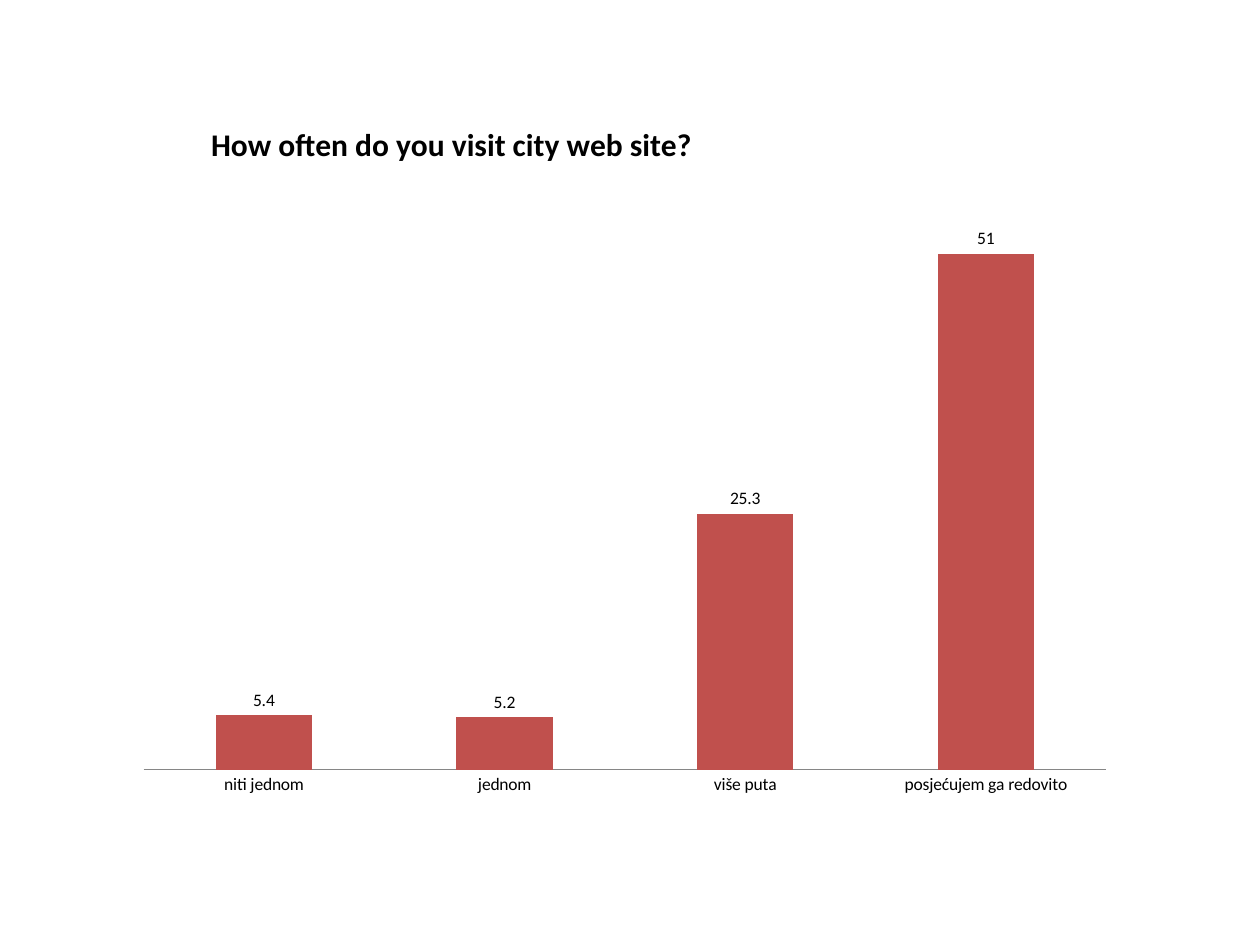
"""Build a slide with a column chart of how often people visit the city web site."""
from dataclasses import dataclass

import pptx
import pptx.chart.data
import pptx.dml.color
import pptx.enum.chart
import pptx.oxml
import pptx.oxml.ns
import pptx.util
from pptx.util import Inches


@dataclass(frozen=True)
class Theme:
    font: str = "Calibri"
    text: str = "000000"
    column: str = "C0504D"
    axis: str = "868686"
    title_size: int = 18
    label_size: int = 10


THEME = Theme()
CHART_BOX = (0.98, 0.6, 7.95, 5.83)
PLOT_BOX = (1.14, 1.29, 7.64, 4.82)
TITLE_POSITION = (1.63, 0.93)
QUESTION = "How often do you visit city web site?"
ANSWERS = {
    "niti jednom": 5.4,
    "jednom": 5.2,
    "više puta": 25.3,
    "posjećujem ga redovito": 51,
}


def rgb(value):
    return pptx.dml.color.RGBColor.from_string(value)


def style_font(font, size, bold=False):
    font.name = THEME.font
    font.size = pptx.util.Pt(size)
    font.bold = bold
    font.color.rgb = rgb(THEME.text)


def set_layout(part, index, left, top, width=None, height=None, inner=False):
    """Place a chart part at a slide position given in inches."""
    chart_left, chart_top, chart_width, chart_height = CHART_BOX
    fractions = {"x": (left - chart_left) / chart_width,
                 "y": (top - chart_top) / chart_height}
    if width is not None:
        fractions.update(w=width / chart_width, h=height / chart_height)
    target = '<c:layoutTarget val="inner"/>' if inner else ""
    modes = "".join(f'<c:{key}Mode val="edge"/>' for key in "xy")
    values = "".join(f'<c:{key} val="{value:.4f}"/>' for key, value in fractions.items())
    for old_layout in part.findall(pptx.oxml.ns.qn("c:layout")):
        part.remove(old_layout)
    part.insert(index, pptx.oxml.parse_xml(
        f'<c:layout {pptx.oxml.ns.nsdecls("c")}><c:manualLayout>'
        f"{target}{modes}{values}</c:manualLayout></c:layout>"))


def add_answers_chart(slide):
    answers = pptx.chart.data.CategoryChartData()
    answers.categories = list(ANSWERS)
    answers.add_series("Series 1", list(ANSWERS.values()))
    chart = slide.shapes.add_chart(
        pptx.enum.chart.XL_CHART_TYPE.COLUMN_CLUSTERED,
        *map(Inches, CHART_BOX), answers).chart
    chart.has_legend = False
    style_font(chart.font, THEME.label_size)
    return chart


def style_title(chart):
    chart.has_title = True
    title = chart.chart_title
    title.text_frame.text = QUESTION
    style_font(title.text_frame.paragraphs[0].runs[0].font, THEME.title_size, bold=True)
    set_layout(title.element, 1, *TITLE_POSITION)


def style_axes(chart):
    frequency = chart.category_axis
    frequency.major_tick_mark = pptx.enum.chart.XL_TICK_MARK.NONE
    frequency.format.line.color.rgb = rgb(THEME.axis)
    frequency.format.line.width = pptx.util.Pt(0.75)
    share = chart.value_axis
    share.minimum_scale = 0
    share.maximum_scale = 60
    share.has_major_gridlines = False
    share.visible = False


def style_columns(chart):
    columns = chart.plots[0]
    columns.gap_width = 150
    columns.vary_by_categories = False
    fill = columns.series[0].format.fill
    fill.solid()
    fill.fore_color.rgb = rgb(THEME.column)
    columns.has_data_labels = True
    labels = columns.data_labels
    labels.show_value = True
    labels.position = pptx.enum.chart.XL_LABEL_POSITION.OUTSIDE_END
    style_font(labels.font, THEME.label_size)
    plot_area = chart.element.find(".//" + pptx.oxml.ns.qn("c:plotArea"))
    set_layout(plot_area, 0, *PLOT_BOX, inner=True)


def main():
    presentation = pptx.Presentation()
    presentation.slide_width = Inches(10)
    presentation.slide_height = Inches(7.5)
    slide = presentation.slides.add_slide(presentation.slide_layouts[6])
    chart = add_answers_chart(slide)
    style_title(chart)
    style_axes(chart)
    style_columns(chart)
    presentation.save("out.pptx")


if __name__ == "__main__":
    main()
